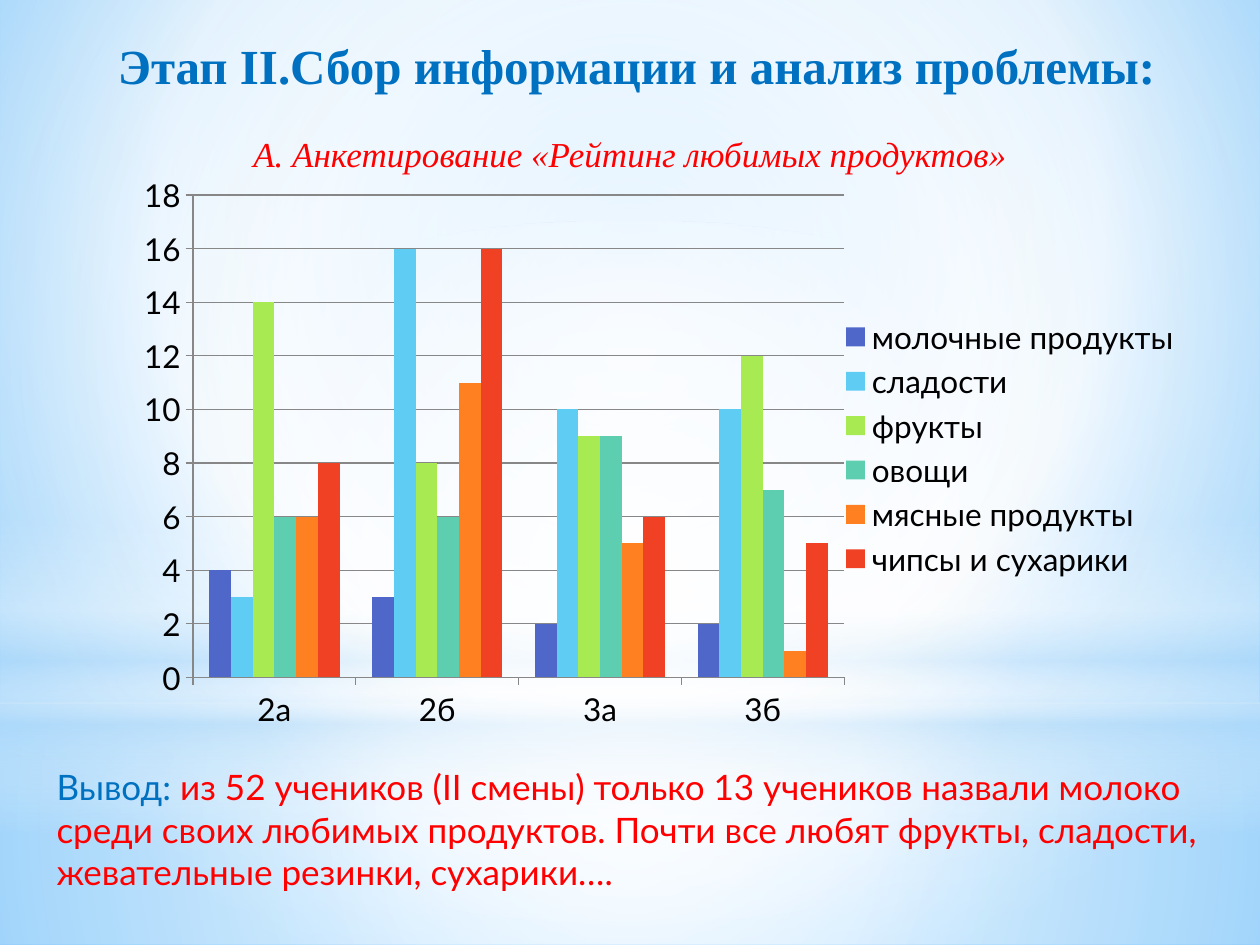
from lxml.etree import SubElement
from pptx import Presentation
from pptx.chart.data import CategoryChartData
from pptx.dml.color import RGBColor
from pptx.enum.chart import XL_CHART_TYPE, XL_LEGEND_POSITION, XL_TICK_MARK
from pptx.enum.shapes import MSO_SHAPE
from pptx.enum.text import MSO_AUTO_SIZE, PP_ALIGN
from pptx.oxml import parse_xml
from pptx.oxml.ns import nsdecls, qn
from pptx.util import Inches, Pt

BLUE, RED, BLACK, GRAY = "0070C0", "FF0000", "000000", "878787"
WHITE, PALE = "FFFFFF", "B4DCFA"
SANS, SERIF = "Lato", "Times New Roman"
CENTER = (50, 50, 50, 50)


def color(value):
    return RGBColor.from_string(value)


def gradient(stops, focus=None):
    """Build a gradient: circular around the focus rectangle, or top to bottom without one."""
    stop_list = "".join(
        f'<a:gs pos="{position * 1000}"><a:srgbClr val="{value}">'
        f'<a:alpha val="{alpha * 1000}"/></a:srgbClr></a:gs>'
        for position, value, alpha in stops
    )
    if focus:
        sides = " ".join(f'{side}="{share * 1000}"' for side, share in zip("ltrb", focus))
        direction = f'<a:path path="circle"><a:fillToRect {sides}/></a:path>'
    else:
        direction = '<a:lin ang="5400000" scaled="0"/>'
    return parse_xml(
        f'<a:gradFill {nsdecls("a")} rotWithShape="1">'
        f"<a:gsLst>{stop_list}</a:gsLst>{direction}</a:gradFill>"
    )


class SlideBuilder:
    def __init__(self, deck):
        self.slide = deck.slides.add_slide(deck.slide_layouts[6])

    def background(self, stops, focus):
        self.slide.background.fill.solid()
        solid = self.slide.element.xpath(".//p:bgPr/a:solidFill")[0]
        solid.getparent().replace(solid, gradient(stops, focus))

    def glow(self, kind, top, height, stops, focus=CENTER):
        """Add a full-width translucent shape."""
        shape = self.slide.shapes.add_shape(kind, 0, Inches(top), Inches(10), Inches(height))
        shape.shadow.inherit = False
        shape.line.fill.background()
        shape.fill.solid()
        solid = shape.element.xpath("./p:spPr/a:solidFill")[0]
        solid.getparent().replace(solid, gradient(stops, focus))

    def text_box(self, left, top, width, height):
        box = self.slide.shapes.add_textbox(
            Inches(left), Inches(top), Inches(width), Inches(height))
        frame = box.text_frame
        frame.word_wrap = True
        frame.auto_size = MSO_AUTO_SIZE.SHAPE_TO_FIT_TEXT
        return frame

    def span(self, para, text, size, font, value, bold=False, italic=False):
        span = para.add_run()
        span.text = text
        span.font.size, span.font.name = Pt(size), font
        span.font.bold, span.font.italic = bold, italic
        span.font.color.rgb = color(value)

    def heading(self, para, text, size, value, **style):
        para.alignment = PP_ALIGN.CENTER
        para.line_spacing = 1.5
        para.space_after = Pt(10)
        self.span(para, text, size, SERIF, value, **style)

    def column_chart(self, left, top, width, height, categories, series, plot_layout):
        data = CategoryChartData()
        data.categories = categories
        for name, _, values in series:
            data.add_series(name, values)
        chart = self.slide.shapes.add_chart(
            XL_CHART_TYPE.COLUMN_CLUSTERED, Inches(left), Inches(top),
            Inches(width), Inches(height), data).chart
        chart.has_title = False
        chart.font.size, chart.font.name = Pt(18), SANS
        chart.font.color.rgb = color(BLACK)
        chart.has_legend = True
        chart.legend.position = XL_LEGEND_POSITION.RIGHT
        chart.legend.include_in_layout = False

        plot = chart.plots[0]
        plot.gap_width, plot.overlap = 150, 0
        plot.vary_by_categories = False
        for item, (_, value, _) in zip(plot.series, series):
            item.format.fill.solid()
            item.format.fill.fore_color.rgb = color(value)

        chart.value_axis.has_major_gridlines = True
        chart.value_axis.minimum_scale, chart.value_axis.maximum_scale = 0, 18
        chart.value_axis.major_unit = 2
        axes = (chart.category_axis, chart.value_axis)
        for axis in axes:
            axis.major_tick_mark = XL_TICK_MARK.OUTSIDE
        for part in (*axes, chart.value_axis.major_gridlines):
            part.format.line.color.rgb = color(GRAY)
            part.format.line.width = Pt(0.75)
        self.place_plot(chart, plot_layout)

    def place_plot(self, chart, plot_layout):
        """Fix the inner plot area by shares of the chart size."""
        area = chart.element.find(f'.//{qn("c:plotArea")}')
        for old in area.findall(qn("c:layout")):
            area.remove(old)
        layout = SubElement(area, qn("c:layout"))
        area.insert(0, layout)
        manual = SubElement(layout, qn("c:manualLayout"))
        settings = [("layoutTarget", "inner"), ("xMode", "edge"), ("yMode", "edge")]
        for tag, value in settings + list(zip("xywh", plot_layout)):
            SubElement(manual, qn(f"c:{tag}")).set("val", str(value))


def main():
    deck = Presentation()
    deck.slide_width, deck.slide_height = Inches(10), Inches(7.5)
    page = SlideBuilder(deck)

    page.background([(0, "9ED5FF", 100), (60, WHITE, 100), (100, "5BB9FF", 100)],
                    (20, 10, 20, 60))
    page.glow(MSO_SHAPE.RECTANGLE, 5.58, 1.92,
              [(0, WHITE, 91), (37, WHITE, 76), (100, PALE, 79)])
    page.glow(MSO_SHAPE.RECTANGLE, 0, 5.58,
              [(0, WHITE, 89), (48, WHITE, 62), (100, PALE, 79)])
    page.glow(MSO_SHAPE.RECTANGLE, 4.12, 2.5,
              [(0, WHITE, 0), (29, WHITE, 30), (45, PALE, 40),
               (55, WHITE, 26), (65, PALE, 60), (100, WHITE, 0)], focus=None)
    page.glow(MSO_SHAPE.OVAL, 1.75, 5.58, [(0, WHITE, 100), (56, WHITE, 0)])

    page.column_chart(
        0.98, 1.31, 8.5, 4.49,
        ["2а", "2б", "3а", "3б"],
        [
            ("молочные продукты", "4E67C8", (4, 3, 2, 2)),
            ("сладости", "5ECCF3", (3, 16, 10, 10)),
            ("фрукты", "A7EA52", (14, 8, 9, 12)),
            ("овощи", "5DCEAF", (6, 6, 9, 7)),
            ("мясные продукты", "FF8021", (6, 11, 5, 1)),
            ("чипсы и сухарики", "F14124", (8, 16, 6, 5)),
        ],
        plot_layout=(0.065, 0.053, 0.608, 0.853),
    )

    conclusion = page.text_box(0.35, 6.03, 9.45, 1.11).paragraphs[0]
    page.span(conclusion, "Вывод: ", 20, SANS, BLUE)
    page.span(conclusion, "из 52 учеников (II смены) только 13 учеников назвали молоко "
              "среди своих любимых продуктов. Почти все любят фрукты, сладости, "
              "жевательные резинки, сухарики….", 20, SANS, RED)

    headings = page.text_box(0, 0, 10, 1.45)
    title = headings.paragraphs[0]
    page.heading(title, "Этап II.Сбор информации и анализ проблемы: ", 28, BLUE, bold=True)
    title._p.get_or_add_pPr().set("indent", str(Inches(0.2)))
    page.heading(headings.add_paragraph(), "А. Анкетирование «Рейтинг любимых продуктов»",
                 20, RED, italic=True)

    deck.save("out.pptx")


if __name__ == "__main__":
    main()
